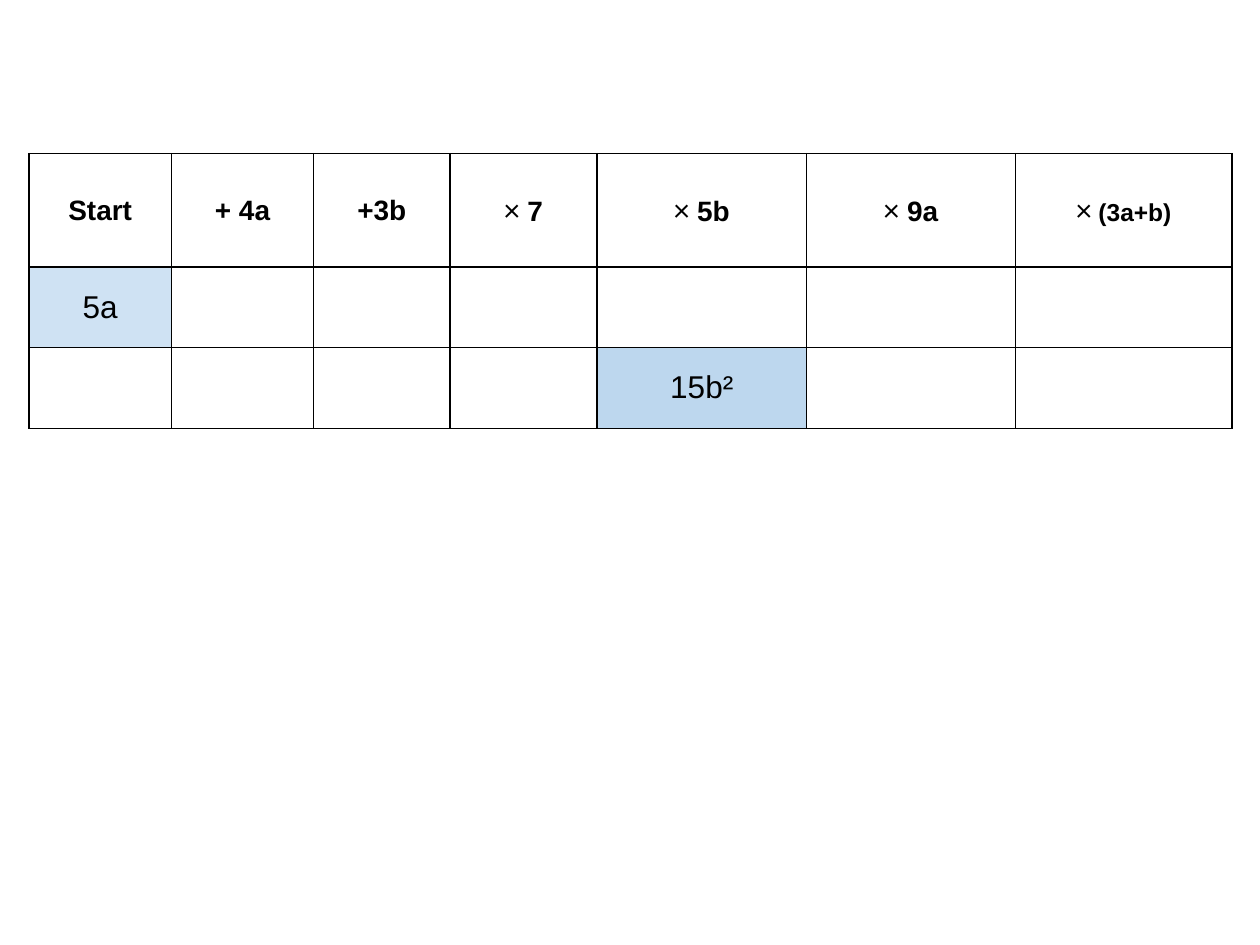
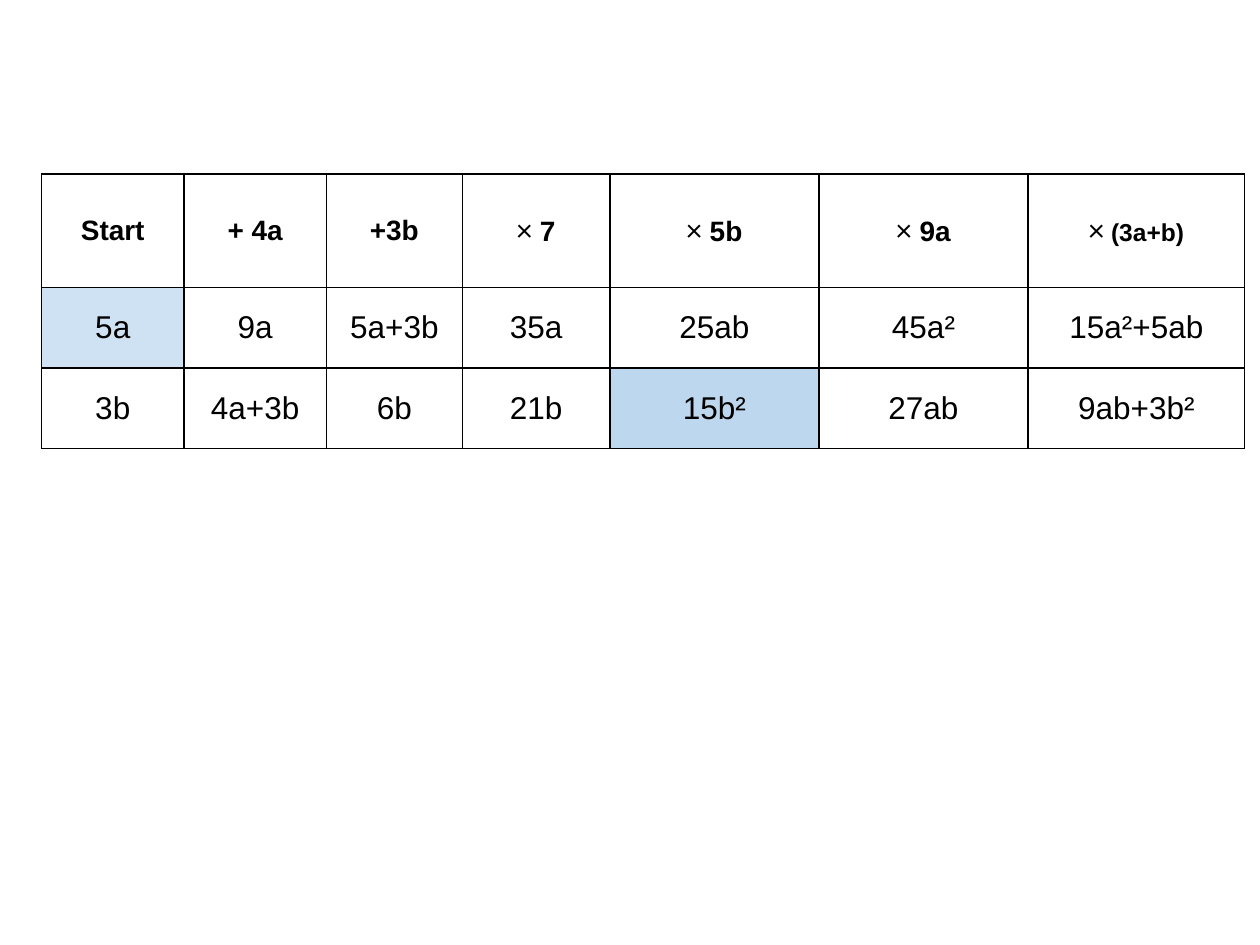
"""Two algebra grid slides: a puzzle showing only its clues, then the answers."""
import pptx
import pptx.dml.color
import pptx.enum.text
import pptx.oxml
import pptx.oxml.ns
import pptx.util

Inches = pptx.util.Inches
Pt = pptx.util.Pt

COLORS = {"text": "000000", "border": "000000", "cell": "FFFFFF",
          "start": "CFE2F3", "product": "BDD7EE"}
HEADING = {"name": "Arial", "size": Pt(16), "bold": True}
SMALL_HEADING = {**HEADING, "size": Pt(14)}
TIMES = {"name": "Calibri", "size": Pt(18), "bold": False}
BODY = {"name": "Arial", "size": Pt(18), "bold": False}

COL_WIDTHS = [1.13, 1.13, 1.08, 1.17, 1.66, 1.66, 1.72]
ROW_HEIGHTS = [0.9, 0.64, 0.64]
HEADERS = [
    [("Start", HEADING)],
    [("+ 4a", HEADING)],
    [("+3b", HEADING)],
    [("×", TIMES), (" 7", HEADING)],
    [("×", TIMES), (" 5b", HEADING)],
    [("×", TIMES), (" 9a", HEADING)],
    [("×", TIMES), (" (3a+b)", SMALL_HEADING)],
]
ANSWERS = [
    ["5a", "9a", "5a+3b", "35a", "25ab", "45a²", "15a²+5ab"],
    ["3b", "4a+3b", "6b", "21b", "15b²", "27ab", "9ab+3b²"],
]
CLUES = {(1, 0): "start", (2, 4): "product"}


def rgb(key):
    return pptx.dml.color.RGBColor.from_string(COLORS[key])


def add_borders(cell, width=1):
    tc_pr = cell._tc.get_or_add_tcPr()
    for side in "LRTB":
        tc_pr.append(pptx.oxml.parse_xml(
            f'<a:ln{side} {pptx.oxml.ns.nsdecls("a")} w="{Pt(width)}"><a:solidFill>'
            f'<a:srgbClr val="{COLORS["border"]}"/></a:solidFill></a:ln{side}>'))


def write_runs(cell, runs):
    p = cell.text_frame.paragraphs[0]
    p.alignment = pptx.enum.text.PP_ALIGN.CENTER
    for text, style in runs:
        r = p.add_run()
        r.text = text
        r.font.color.rgb = rgb("text")
        for attr, value in style.items():
            setattr(r.font, attr, value)


def format_cell(cell, fill):
    cell.vertical_anchor = pptx.enum.text.MSO_ANCHOR.MIDDLE
    add_borders(cell)
    cell.fill.solid()
    cell.fill.fore_color.rgb = rgb(fill)


def add_grid(s, left, top, show_answers):
    rows, cols = len(ROW_HEIGHTS), len(COL_WIDTHS)
    table = s.shapes.add_table(rows, cols, Inches(left), Inches(top),
                               Inches(sum(COL_WIDTHS)), Inches(sum(ROW_HEIGHTS))).table
    table.first_row = table.horz_banding = False
    for column, width in zip(table.columns, COL_WIDTHS):
        column.width = Inches(width)
    for row, height in zip(table.rows, ROW_HEIGHTS):
        row.height = Inches(height)
    for i in range(rows):
        for j in range(cols):
            cell = table.cell(i, j)
            format_cell(cell, CLUES.get((i, j), "cell"))
            if i == 0:
                write_runs(cell, HEADERS[j])
            elif show_answers or (i, j) in CLUES:
                write_runs(cell, [(ANSWERS[i - 1][j], BODY)])


def main():
    prs = pptx.Presentation()
    prs.slide_width, prs.slide_height = Inches(10), Inches(7.5)
    for left, top, show_answers in [(0.23, 1.22, False), (0.33, 1.38, True)]:
        s = prs.slides.add_slide(prs.slide_layouts[6])
        add_grid(s, left, top, show_answers)
    prs.save("out.pptx")


if __name__ == "__main__":
    main()
